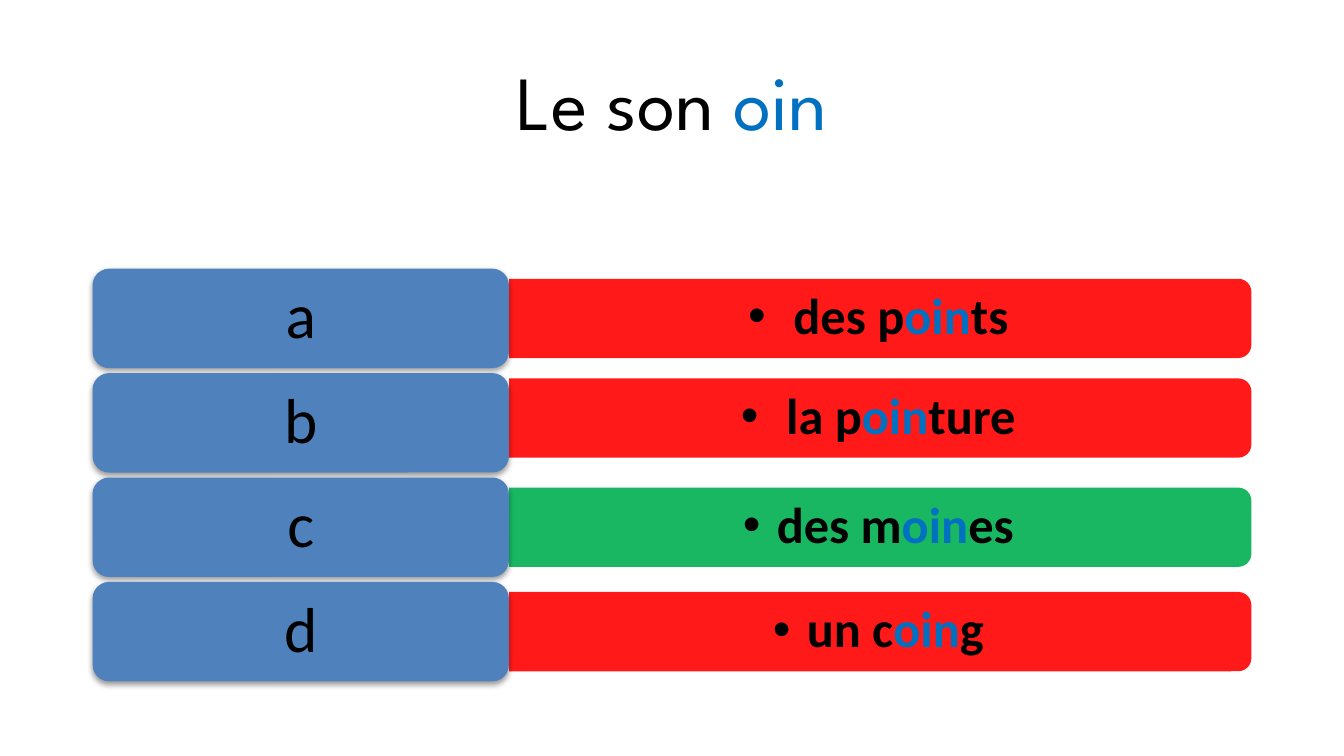
from dataclasses import dataclass

from lxml import etree
from pptx import Presentation
from pptx.dml.color import RGBColor
from pptx.enum.shapes import MSO_SHAPE
from pptx.enum.text import MSO_ANCHOR, PP_ALIGN
from pptx.oxml import parse_xml
from pptx.oxml.ns import qn
from pptx.util import Cm, Pt

ROUNDED = MSO_SHAPE.ROUNDED_RECTANGLE
TWO_ROUNDED = MSO_SHAPE.ROUND_2_SAME_RECTANGLE
MIDDLE = MSO_ANCHOR.MIDDLE
CENTER = PP_ALIGN.CENTER
DRAWING = "http://schemas.openxmlformats.org/drawingml/2006/main"


@dataclass(frozen=True)
class Theme:
    ink: RGBColor = RGBColor(0, 0, 0)
    sound: RGBColor = RGBColor(0x00, 0x70, 0xC0)
    label: RGBColor = RGBColor(0x4F, 0x81, 0xBD)
    wrong: RGBColor = RGBColor(0xFF, 0x00, 0x00)
    right: RGBColor = RGBColor(0x00, 0xB0, 0x50)
    title_font: str = "League Spartan"
    body_font: str = "Calibri"
    title_size: Pt = Pt(41)
    label_size: Pt = Pt(34)
    answer_size: Pt = Pt(27)


THEME = Theme()
SOUND = "oin"
ANSWERS = [
    ("a", " des p", "ts", THEME.wrong, 0),
    ("b", " la p", "ture", THEME.wrong, -0.09),
    ("c", "des m", "es", THEME.right, 0),
    ("d", "un c", "g", THEME.wrong, 0),
]


def write_runs(paragraph, parts, font_name, size, bold=False):
    paragraph.alignment = CENTER
    paragraph.font.name = font_name
    paragraph.font.size = size
    paragraph.font.bold = bold
    for text in parts:
        run = paragraph.add_run()
        run.text = text
        run.font.color.rgb = THEME.sound if text == SOUND else THEME.ink


def add_text_box(slide, left, top, width, height):
    text_box = slide.shapes.add_textbox(Cm(left), Cm(top), Cm(width), Cm(height))
    frame = text_box.text_frame
    frame.word_wrap = True
    frame.vertical_anchor = MIDDLE
    return frame.paragraphs[0]


def add_block(slide, preset, color, left, top, width, height):
    shape = slide.shapes.add_shape(preset, Cm(left), Cm(top), Cm(width), Cm(height))
    shape.fill.solid()
    shape.fill.fore_color.rgb = color
    shape.line.fill.background()
    shape.shadow.inherit = False
    return shape


def add_bullet(paragraph):
    properties = paragraph._p.get_or_add_pPr()
    properties.set("marL", str(Cm(0.64)))
    properties.set("indent", str(-Cm(0.64)))
    etree.SubElement(properties, qn("a:buFont"), typeface="Arial")
    etree.SubElement(properties, qn("a:buChar"), char="•")


def add_title(slide, left, top, width, height):
    paragraph = add_text_box(slide, left, top, width, height)
    write_runs(paragraph, ["Le son ", SOUND], THEME.title_font, THEME.title_size)


def add_answer_bar(slide, parts, color, left, top, width, height):
    shift = (width - height) / 2
    bar = add_block(slide, TWO_ROUNDED, color, left + shift, top - shift, height, width)
    bar.rotation = 90
    color_node = bar._element.spPr.find(f"{qn('a:solidFill')}/{qn('a:srgbClr')}")
    etree.SubElement(color_node, qn("a:alpha"), val="90000")

    paragraph = add_text_box(slide, left, top, width - 0.07, height)
    paragraph.line_spacing = 0.9
    add_bullet(paragraph)
    write_runs(paragraph, parts, THEME.body_font, THEME.answer_size, bold=True)


def add_label(slide, letter, left, top, width, height):
    label = add_block(slide, ROUNDED, THEME.label, left, top, width, height)
    label._element.spPr.find(qn("a:effectLst")).append(parse_xml(
        f'<a:outerShdw xmlns:a="{DRAWING}" blurRad="{Pt(3.1)}" dist="{Pt(1.6)}" '
        'dir="5400000" rotWithShape="0"><a:srgbClr val="000000">'
        '<a:alpha val="38000"/></a:srgbClr></a:outerShdw>'
    ))
    frame = label.text_frame
    frame.word_wrap = True
    frame.vertical_anchor = MIDDLE
    paragraph = frame.paragraphs[0]
    paragraph.line_spacing = 0.9
    write_runs(paragraph, [letter], THEME.body_font, THEME.label_size)


def add_answers(slide, left, top, width, height):
    label_width, label_height, bar_height = 7.87, 1.88, 1.5
    pitch = (height - label_height) / (len(ANSWERS) - 1)
    for index, (letter, before, after, color, nudge) in enumerate(ANSWERS):
        row_top = top + index * pitch
        bar_top = row_top + (label_height - bar_height) / 2 + nudge
        add_answer_bar(slide, [before, SOUND, after], color,
                       left + label_width, bar_top, width - label_width, bar_height)
        add_label(slide, letter, left, row_top, label_width, label_height)


def main():
    presentation = Presentation()
    presentation.slide_width = Cm(25.4)
    presentation.slide_height = Cm(14.29)
    slide = presentation.slides.add_slide(presentation.slide_layouts[6])
    add_title(slide, 1.75, 0.51, 21.9, 2.77)
    add_answers(slide, 1.75, 5.08, 21.9, 7.8)
    presentation.save("out.pptx")


if __name__ == "__main__":
    main()
